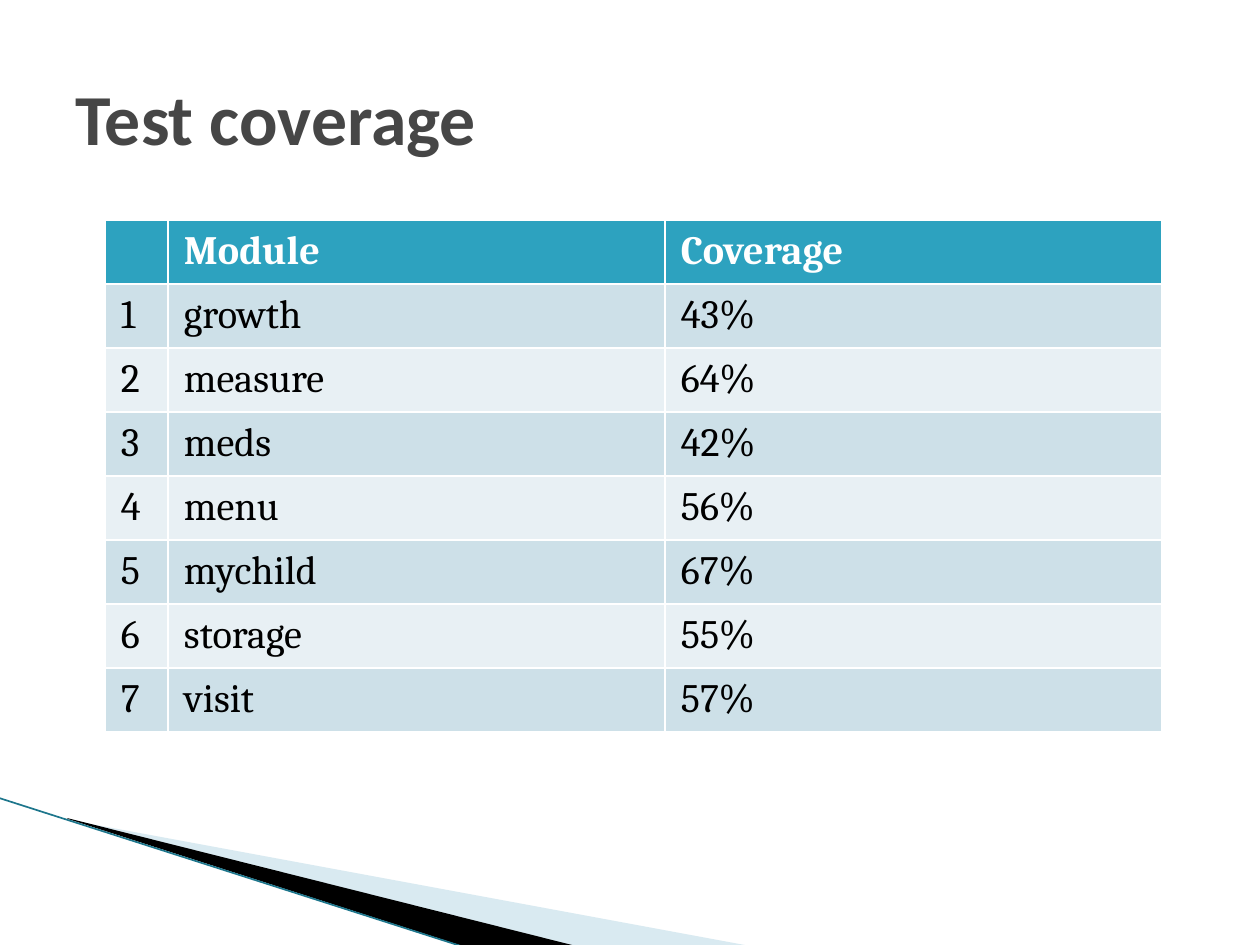
"""Build the test coverage slide."""
from dataclasses import dataclass

from lxml import etree
from pptx import Presentation
from pptx.dml.color import RGBColor
from pptx.enum.shapes import MSO_CONNECTOR
from pptx.enum.text import MSO_ANCHOR, PP_ALIGN
from pptx.oxml.ns import qn
from pptx.util import Pt

STRAIGHT = MSO_CONNECTOR.STRAIGHT
MIDDLE = MSO_ANCHOR.MIDDLE
LEFT = PP_ALIGN.LEFT
SCALE = 914400 / 126
TITLE_ONLY = 5

COVERAGE = {
    "growth": "43%",
    "measure": "64%",
    "meds": "42%",
    "menu": "56%",
    "mychild": "67%",
    "storage": "55%",
    "visit": "57%",
}


@dataclass(frozen=True)
class Theme:
    title_font: str = "Calibri"
    body_font: str = "Cambria"
    title_size: int = 41
    body_size: int = 23
    title: str = "464646"
    text: str = "000000"
    header_text: str = "FFFFFF"
    header_fill: str = "2DA2BF"
    bands: tuple = ("CDE0E8", "E8F0F4")
    light_wedge: str = "A0CBDC"
    dark_wedge: str = "000000"
    edge: str = "1D768C"


def px(length):
    return round(length * SCALE)


class SlideBuilder:
    def __init__(self, page, theme):
        self.page = page
        self.theme = theme

    def style(self, para, font, size, color, bold):
        para.alignment = LEFT
        for span in para.runs:
            span.font.name = font
            span.font.size = Pt(size)
            span.font.bold = bold
            span.font.color.rgb = RGBColor.from_string(color)

    def title(self, text, left, top, width, height):
        box = self.page.shapes.title
        box.left, box.top, box.width, box.height = map(px, (left, top, width, height))
        frame = box.text_frame
        frame.text = text
        frame.vertical_anchor = MIDDLE
        theme = self.theme
        self.style(frame.paragraphs[0], theme.title_font, theme.title_size, theme.title, True)

    def wedge(self, points, color, opacity=100):
        outline = self.page.shapes.build_freeform(*points[0], scale=SCALE)
        outline.add_line_segments(points[1:], close=True)
        shape = outline.convert_to_shape()
        shape.shadow.inherit = False
        shape.fill.solid()
        shape.fill.fore_color.rgb = RGBColor.from_string(color)
        shape.line.fill.background()
        if opacity < 100:
            tint = shape.fill._xPr.find(".//" + qn("a:srgbClr"))
            etree.SubElement(tint, qn("a:alpha"), val=str(opacity * 1000))

    def line(self, start, end, color, weight):
        edge = self.page.shapes.add_connector(STRAIGHT, *map(px, start + end))
        edge.line.color.rgb = RGBColor.from_string(color)
        edge.line.width = Pt(weight)
        etree.SubElement(edge._element.spPr, qn("a:effectLst"))

    def table(self, rows, left, top, widths, row_height):
        size = (sum(widths), row_height * len(rows))
        table = self.page.shapes.add_table(
            len(rows), len(widths), *map(px, (left, top, *size))
        ).table
        for column, width in zip(table.columns, widths):
            column.width = px(width)
        for index, values in enumerate(rows):
            table.rows[index].height = px(row_height)
            for cell, value in zip(table.rows[index].cells, values):
                self.cell(cell, value, index)

    def cell(self, cell, value, row):
        theme = self.theme
        header = row == 0
        fill = theme.header_fill if header else theme.bands[(row - 1) % 2]
        color = theme.header_text if header else theme.text
        cell.fill.solid()
        cell.fill.fore_color.rgb = RGBColor.from_string(fill)
        cell.margin_left = cell.margin_right = px(16)
        cell.margin_top = cell.margin_bottom = px(8)
        cell.text = value
        para = cell.text_frame.paragraphs[0]
        self.style(para, theme.body_font, theme.body_size, color, header)


def main():
    deck = Presentation()
    deck.slide_width, deck.slide_height = px(1260), px(945)
    page = deck.slides.add_slide(deck.slide_layouts[TITLE_ONLY])
    theme = Theme()
    slide = SlideBuilder(page, theme)

    slide.wedge([(69, 820), (750, 946), (575, 946), (69, 819)], theme.light_wedge, 40)
    slide.wedge([(67, 818), (576, 946), (469, 948), (68, 819)], theme.dark_wedge)
    slide.line((-1, 798), (467, 948), theme.edge, 0.95)
    slide.title("Test coverage", 63, 38, 1134, 157)

    rows = [("", "Module", "Coverage")]
    rows += [(str(number), *item) for number, item in enumerate(COVERAGE.items(), 1)]
    slide.table(rows, 105, 220, (63, 497, 497), 64)
    deck.save("out.pptx")


if __name__ == "__main__":
    main()
